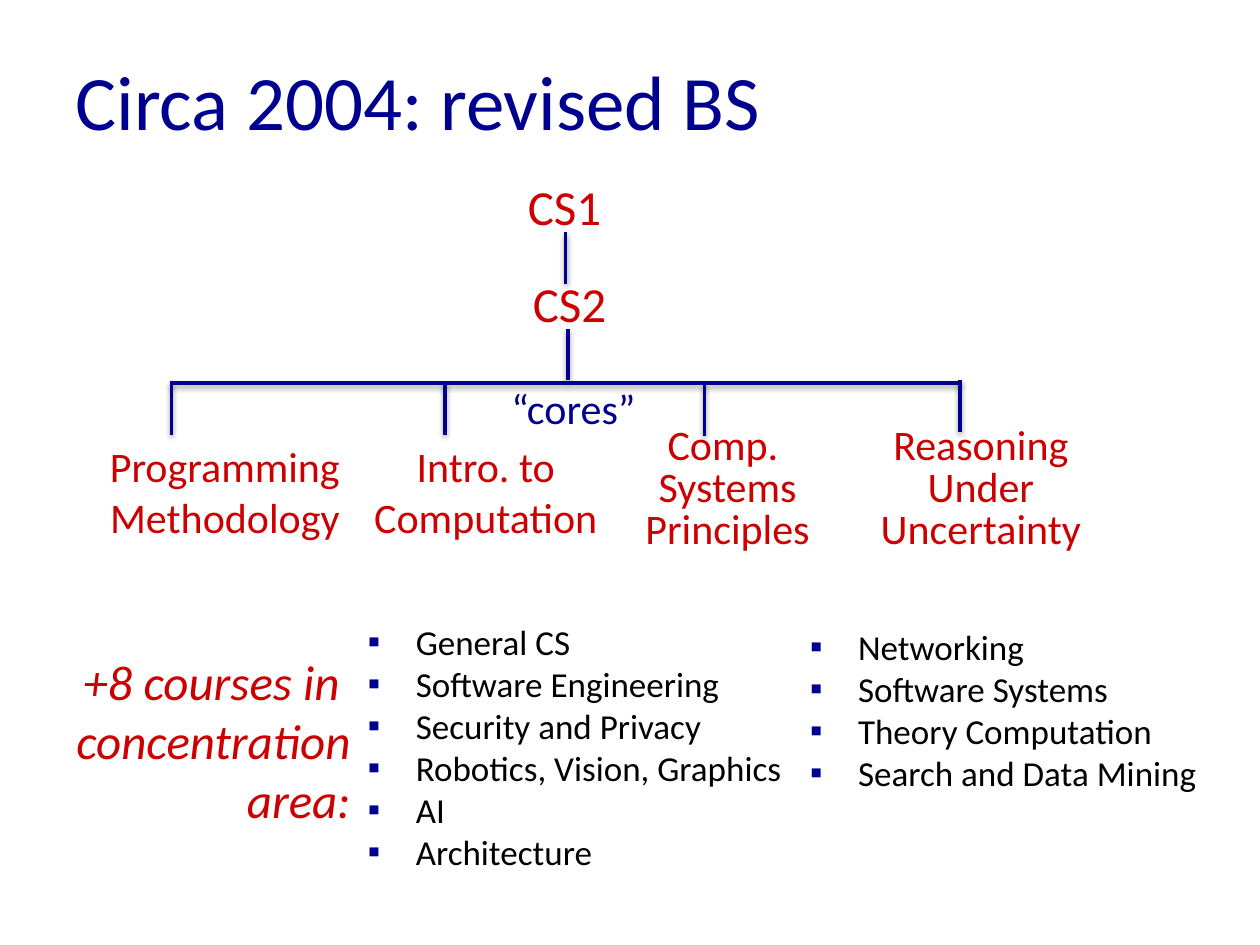
from lxml import etree
from pptx import Presentation
from pptx.dml.color import RGBColor
from pptx.enum.shapes import MSO_CONNECTOR
from pptx.enum.text import MSO_ANCHOR, MSO_AUTO_SIZE, PP_ALIGN
from pptx.oxml import parse_xml
from pptx.oxml.ns import nsdecls, qn
from pptx.util import Inches, Pt

LEFT, CENTER, RIGHT = PP_ALIGN.LEFT, PP_ALIGN.CENTER, PP_ALIGN.RIGHT
STRAIGHT = MSO_CONNECTOR.STRAIGHT
TWO_CONTENT = 3
COLORS = {"navy": "000090", "red": "CC0000", "black": "000000", "white": "FFFFFF"}
SHADOW = (
    f'<a:effectLst {nsdecls("a")}><a:outerShdw blurRad="40000" dist="20000" '
    'dir="5400000" rotWithShape="0"><a:srgbClr val="000000">'
    '<a:alpha val="38000"/></a:srgbClr></a:outerShdw></a:effectLst>'
)


def write(box, lines, size, color, align=LEFT, spacing=None, italic=None):
    """Fill the box with one paragraph per line and return the paragraphs."""
    frame = box.text_frame
    for index, line in enumerate(lines):
        para = frame.add_paragraph() if index else frame.paragraphs[0]
        para.alignment = align
        if spacing:
            para.line_spacing = Pt(spacing)
        span = para.add_run()
        span.text = line
        span.font.name = "Calibri"
        span.font.size = Pt(size)
        span.font.italic = italic
        span.font.color.rgb = RGBColor.from_string(COLORS[color])
    return frame.paragraphs


def add_label(left, top, width, height, wrap=True):
    box = page.shapes.add_textbox(Inches(left), Inches(top), Inches(width), Inches(height))
    box.text_frame.word_wrap = wrap
    return box


deck = Presentation()
deck.slide_width, deck.slide_height = Inches(10), Inches(7.5)
page = deck.slides.add_slide(deck.slide_layouts[TWO_CONTENT])

# Title
title = page.shapes.title
title.left, title.top = Inches(0.5), Inches(0.17)
title.width, title.height = Inches(9), Inches(1.25)
title.text_frame.auto_size = MSO_AUTO_SIZE.NONE
title.text_frame.vertical_anchor = MSO_ANCHOR.MIDDLE
write(title, ["Circa 2004: revised BS"], 44, "navy")

# Concentration lists
concentrations = [
    (1, 2.82, 4.93, 3.77, ["General CS", "Software Engineering", "Security and Privacy",
                           "Robotics, Vision, Graphics", "AI", "Architecture"]),
    (2, 6.33, 4.97, 3.43, ["Networking", "Software Systems", "Theory Computation",
                           "Search and Data Mining"]),
]
for number, left, top, width, areas in concentrations:
    body = page.placeholders[number]
    body.left, body.top = Inches(left), Inches(top)
    body.width, body.height = Inches(width), Inches(2.26)
    body.text_frame.auto_size = MSO_AUTO_SIZE.NONE
    for para in write(body, areas, 20, "black", spacing=20):
        para.space_before = Pt(4)
        props = para._p.get_or_add_pPr()
        props.set("marL", str(Inches(0.38)))
        props.set("indent", str(-Inches(0.38)))
        bullet_color = etree.SubElement(props, qn("a:buClr"))
        etree.SubElement(bullet_color, qn("a:srgbClr"), val=COLORS["navy"])
        etree.SubElement(props, qn("a:buFont"), typeface="Calibri")
        etree.SubElement(props, qn("a:buChar"), char="▪")

# Introductory courses
for course, left, top in [("CS1", 4.09, 1.35), ("CS2", 4.13, 2.12)]:
    box = add_label(left, top, 0.88, 0.57)
    box.fill.solid()
    box.fill.fore_color.rgb = RGBColor.from_string(COLORS["white"])
    write(box, [course], 28, "red")

# Core courses
cores = [
    (0.45, 3.45, 2.67, 0.91, None, ["Programming", "Methodology"]),
    (2.56, 3.45, 2.59, 0.91, None, ["Intro. to", "Computation"]),
    (4.44, 3.34, 2.67, 1.16, 24, ["Comp. ", "Systems", "Principles"]),
    (6.71, 3.34, 2.15, 1.12, 24, ["Reasoning", "Under Uncertainty"]),
]
for left, top, width, height, spacing, lines in cores:
    write(add_label(left, top, width, height), lines, 24, "red", CENTER, spacing)

# Tree lines: two stems, the crossbar, then a drop to each core
stems = [(4.51, 2.61, 4.51, 3.02), (4.49, 1.84, 4.49, 2.25)]
crossbar = [(1.35, 3.04, 7.63, 3.04)]
drops = [(x, top, x, top + 0.41)
         for x, top in [(1.36, 3.04), (3.53, 3.04), (5.59, 3.05), (7.62, 3.02)]]
for ends in stems + crossbar + drops:
    line = page.shapes.add_connector(STRAIGHT, *[Inches(value) for value in ends])
    line.line.color.rgb = RGBColor.from_string(COLORS["navy"])
    line.line.width = Pt(2)
    line._element.spPr.append(parse_xml(SHADOW))

# Captions
write(add_label(0.37, 5.12, 2.51, 1.51, wrap=False),
      ["+8 courses in ", "concentration", "area:"], 28, "red", RIGHT, italic=True)
write(add_label(3.96, 2.99, 1.22, 0.5, wrap=False), ["“cores”"], 24, "navy")

deck.save("out.pptx")
